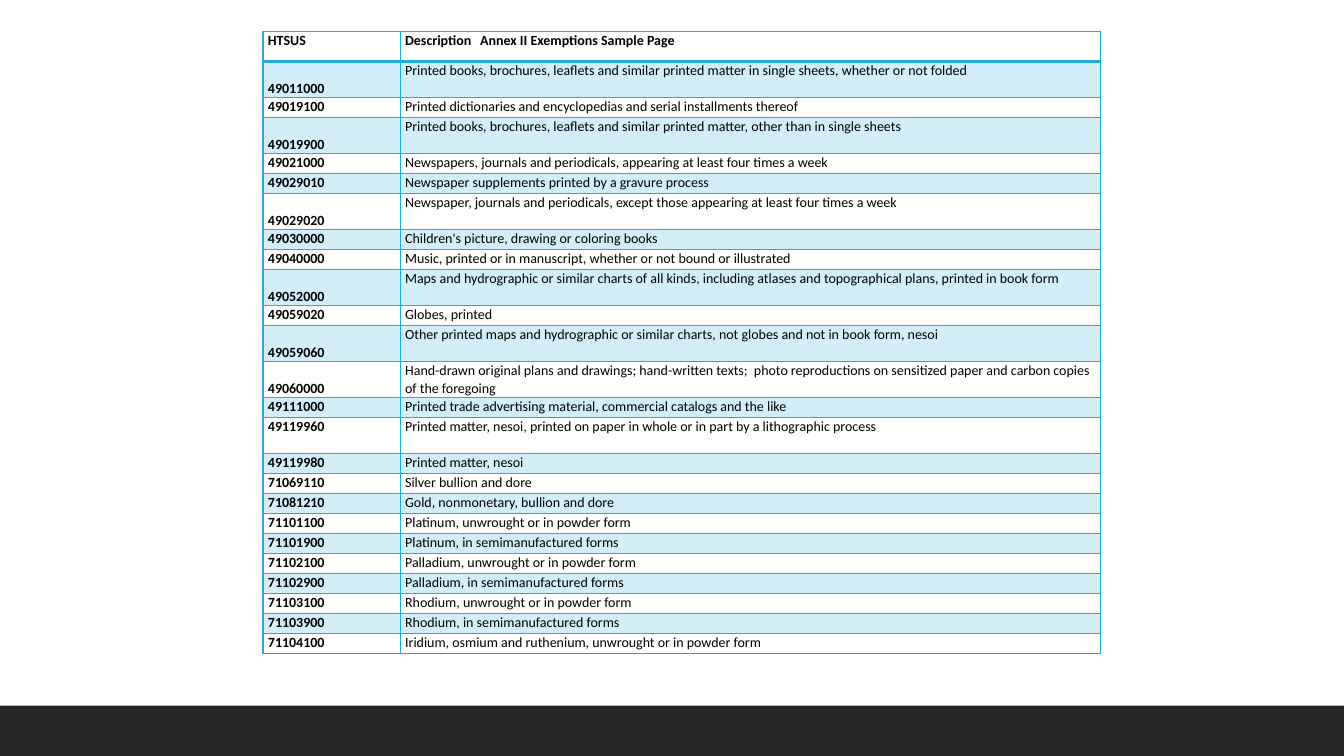
"""Build the Annex II sample page slide."""
import pptx
import pptx.dml.color
import pptx.enum.shapes
import pptx.enum.text
import pptx.oxml
import pptx.oxml.ns
import pptx.util

Pt = pptx.util.Pt
ANCHOR = pptx.enum.text.MSO_ANCHOR
NS = pptx.oxml.ns.nsdecls("a")
HUES = {"bar": "262626", "line": "1CADE4", "band": "1CADE4", "plain": "FFFFFF", "text": "000000"}
WIDTHS = (98, 500.4)
HEAD, TALL, SHORT = 21.4, 25.7, 14.3

GOODS = [
    ("49011000", "Printed books, brochures, leaflets and similar printed matter in single sheets, whether or not folded"),
    ("49019100", "Printed dictionaries and encyclopedias and serial installments thereof"),
    ("49019900", "Printed books, brochures, leaflets and similar printed matter, other than in single sheets"),
    ("49021000", "Newspapers, journals and periodicals, appearing at least four times a week"),
    ("49029010", "Newspaper supplements printed by a gravure process"),
    ("49029020", "Newspaper, journals and periodicals, except those appearing at least four times a week"),
    ("49030000", "Children's picture, drawing or coloring books"),
    ("49040000", "Music, printed or in manuscript, whether or not bound or illustrated"),
    ("49052000", "Maps and hydrographic or similar charts of all kinds, including atlases and topographical plans, "
                 "printed in book form"),
    ("49059020", "Globes, printed"),
    ("49059060", "Other printed maps and hydrographic or similar charts, not globes and not in book form, nesoi"),
    ("49060000", "Hand-drawn original plans and drawings; hand-written texts;  photo reproductions on sensitized paper "
                 "and carbon copies of the foregoing"),
    ("49111000", "Printed trade advertising material, commercial catalogs and the like"),
    ("49119960", "Printed matter, nesoi, printed on paper in whole or in part by a lithographic process"),
    ("49119980", "Printed matter, nesoi"),
    ("71069110", "Silver bullion and dore"),
    ("71081210", "Gold, nonmonetary, bullion and dore"),
    ("71101100", "Platinum, unwrought or in powder form"),
    ("71101900", "Platinum, in semimanufactured forms"),
    ("71102100", "Palladium, unwrought or in powder form"),
    ("71102900", "Palladium, in semimanufactured forms"),
    ("71103100", "Rhodium, unwrought or in powder form"),
    ("71103900", "Rhodium, in semimanufactured forms"),
    ("71104100", "Iridium, osmium and ruthenium, unwrought or in powder form"),
]
LOW = {"49011000", "49019900", "49029020", "49052000", "49059060", "49060000"}
HIGH = LOW | {"49119960"}


def paint(fill, name):
    """Give a fill one of the named colours."""
    fill.solid()
    fill.fore_color.rgb = pptx.dml.color.RGBColor.from_string(HUES[name])


def frame(cell, base):
    """Draw the four borders of a cell, the lowest one base points wide."""
    props = cell._tc.get_or_add_tcPr()
    for side, width in (("L", 1), ("R", 1), ("T", 1), ("B", base)):
        props.append(pptx.oxml.parse_xml(
            f'<a:ln{side} {NS} w="{Pt(width)}"><a:solidFill><a:srgbClr val="{HUES["line"]}"/>'
            f'</a:solidFill></a:ln{side}>'))


def shade(cell, band):
    """Fill a cell with the pale band or with plain white."""
    paint(cell.fill, "band" if band else "plain")
    if band:
        hue = cell._tc.tcPr.find(".//" + pptx.oxml.ns.qn("a:solidFill"))
        hue = cell._tc.tcPr.findall(pptx.oxml.ns.qn("a:solidFill"))[-1][0]
        hue.append(pptx.oxml.parse_xml(f'<a:alpha {NS} val="20000"/>'))


def write(cell, text, bold):
    """Set the text of a cell with its margins and font."""
    cell.margin_left, cell.margin_right = Pt(3.6), Pt(5.8)
    cell.margin_top = cell.margin_bottom = 0
    cell.text = text
    para = cell.text_frame.paragraphs[0]
    para.line_spacing = 1.07
    para.font.name, para.font.size, para.font.bold = "Calibri", Pt(10), bold
    paint(para.font.fill, "text")
    return para


def add_list(slide, left, top):
    """Place the table of tariff codes with its corner at left and top."""
    sizes = [HEAD] + [TALL if code in HIGH else SHORT for code, _ in GOODS]
    shape = slide.shapes.add_table(len(sizes), 2, Pt(left), Pt(top), Pt(sum(WIDTHS)), Pt(sum(sizes)))
    table = shape.table
    table.first_row = table.horz_banding = False
    for col, width in zip(table.columns, WIDTHS):
        col.width = Pt(width)
    rows = [("HTSUS", "Description\tAnnex II Exemptions Sample Page")] + GOODS
    for i, (row, size) in enumerate(zip(rows, sizes)):
        table.rows[i].height = Pt(size)
        for j, text in enumerate(row):
            cell = table.cell(i, j)
            para = write(cell, text, i == 0 or j == 0)
            frame(cell, 2 if i == 0 else 1)
            shade(cell, i % 2 == 1)
            if "\t" in text:
                para.font._element.addprevious(pptx.oxml.parse_xml(
                    f'<a:tabLst {NS}><a:tab pos="{Pt(53.6)}" algn="l"/></a:tabLst>'))
        if row[0] in LOW:
            table.cell(i, 0).vertical_anchor = ANCHOR.BOTTOM


def add_bar(slide, left, top, width, height):
    """Place the dark bar in the given box."""
    kind = pptx.enum.shapes.MSO_SHAPE.RECTANGLE
    bar = slide.shapes.add_shape(kind, Pt(left), Pt(top), Pt(width), Pt(height))
    bar.shadow.inherit = False
    paint(bar.fill, "bar")
    bar.line.fill.background()


def main():
    """Build the slide and save it."""
    deck = pptx.Presentation()
    deck.slide_width, deck.slide_height = Pt(960), Pt(540)
    slide = deck.slides.add_slide(deck.slide_layouts[6])
    add_bar(slide, 0, 504, 960, 36)
    add_list(slide, 187.8, 22.5)
    deck.save("out.pptx")


if __name__ == "__main__":
    main()
